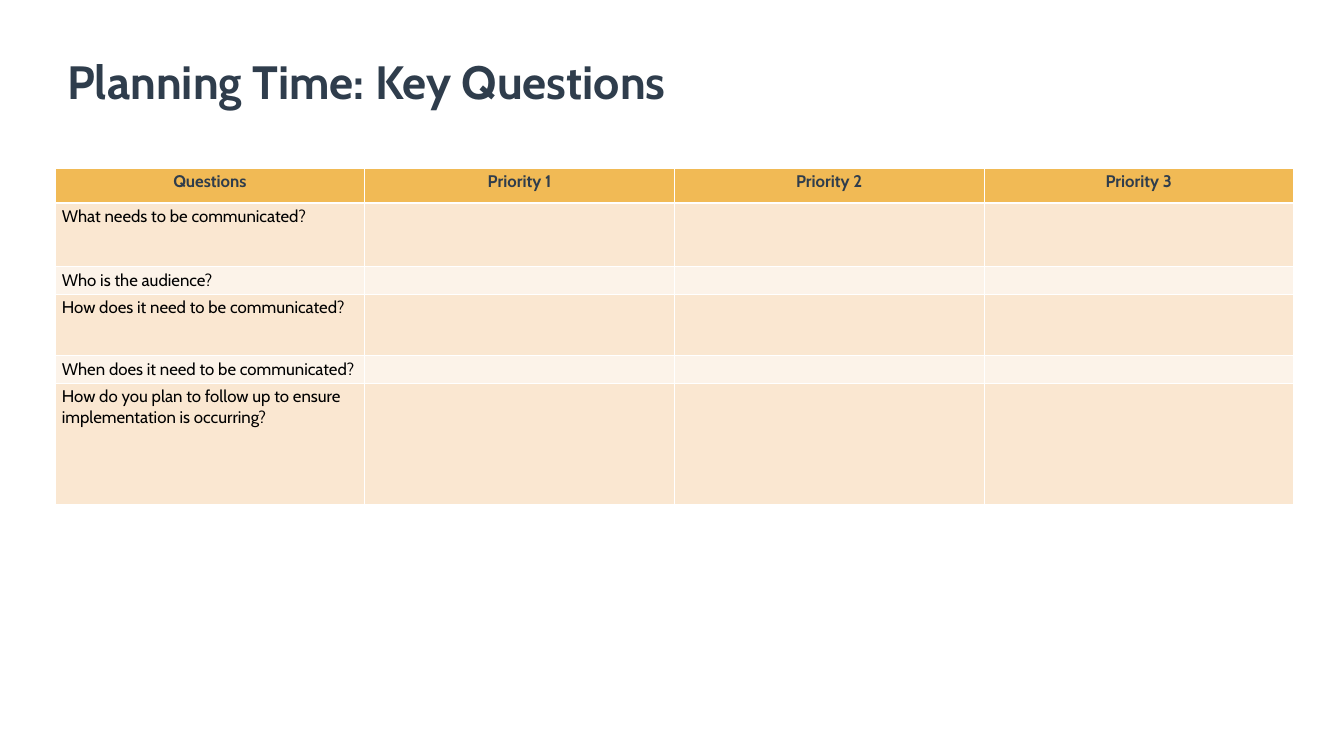
from lxml import etree
from pptx import Presentation
from pptx import util as u
from pptx.dml.color import RGBColor
from pptx.enum import text
from pptx.oxml.ns import qn

# Content
TITLE = "Planning Time: Key Questions"
HEADERS = ["Questions", "Priority 1", "Priority 2", "Priority 3"]
QUESTIONS = [  # question, row height in inches
    ("What needs to be communicated?", 0.95),
    ("Who is the audience?", 0.39),
    ("How does it need to be communicated?", 0.92),
    ("When does it need to be communicated?", 0.41),
    ("How do you plan to follow up to ensure implementation is occurring?", 1.8),
]
HEADER_HEIGHT = 0.52

# Look
COLORS = {"ink": "2F3D4C", "body": "000000", "header": "F1BA55",
          "odd": "FAE7D1", "even": "FCF3E9", "rule": "FFFFFF"}
TITLE_FONT = {"name": "Cabin", "size": u.Pt(50), "bold": True}
HEADER_FONT = {"name": "Cabin", "size": u.Pt(18), "bold": True}
BODY_FONT = {"name": "Cabin", "size": u.Pt(18), "bold": False}

# Geometry in inches
SLIDE_WIDTH, SLIDE_HEIGHT = 20, 11.25
TITLE_BOX = (1, 0.78, 18, 0.84)
TABLE_LEFT, TABLE_TOP, TABLE_WIDTH = 0.82, 2.5, 18.43


def write(para, words, font, color):
    span = para.add_run()
    span.text = words
    for name, value in font.items():
        setattr(span.font, name, value)
    span.font.color.rgb = RGBColor.from_string(COLORS[color])


def draw_borders(cell, widths):
    properties = cell._tc.get_or_add_tcPr()
    for side, points in zip("LRTB", widths):
        line = etree.SubElement(properties, qn(f"a:ln{side}"), w=str(u.Pt(points)))
        fill = etree.SubElement(line, qn("a:solidFill"))
        etree.SubElement(fill, qn("a:srgbClr"), val=COLORS["rule"])


def add_title(page):
    box = page.shapes.title
    box.left, box.top, box.width, box.height = map(u.Inches, TITLE_BOX)
    frame = box.text_frame
    for side in ("left", "top", "right", "bottom"):
        setattr(frame, f"margin_{side}", 0)
    frame.vertical_anchor = text.MSO_ANCHOR.MIDDLE
    frame.auto_size = text.MSO_AUTO_SIZE.NONE
    para = frame.paragraphs[0]
    para.alignment = text.PP_ALIGN.LEFT
    write(para, TITLE, TITLE_FONT, "ink")


def add_questions_table(page):
    heights = [HEADER_HEIGHT] + [height for _, height in QUESTIONS]
    blanks = [""] * (len(HEADERS) - 1)
    rows = [HEADERS] + [[question] + blanks for question, _ in QUESTIONS]
    table = page.shapes.add_table(
        len(rows), len(HEADERS), u.Inches(TABLE_LEFT), u.Inches(TABLE_TOP),
        u.Inches(TABLE_WIDTH), u.Inches(sum(heights))).table
    for column in table.columns:
        column.width = u.Inches(TABLE_WIDTH / len(HEADERS))

    for r, (words_in_row, height) in enumerate(zip(rows, heights)):
        table.rows[r].height = u.Inches(height)
        is_header = r == 0
        shade = "header" if is_header else "odd" if r % 2 else "even"
        for c, words in enumerate(words_in_row):
            cell = table.cell(r, c)
            draw_borders(cell, (1, 1, 3 if r == 1 else 1, 3 if is_header else 1))
            cell.fill.solid()
            cell.fill.fore_color.rgb = RGBColor.from_string(COLORS[shade])
            para = cell.text_frame.paragraphs[0]
            if is_header:
                para.alignment = text.PP_ALIGN.CENTER
                write(para, words, HEADER_FONT, "ink")
            elif words:
                write(para, words, BODY_FONT, "body")


def main():
    deck = Presentation()
    deck.slide_width, deck.slide_height = u.Inches(SLIDE_WIDTH), u.Inches(SLIDE_HEIGHT)
    page = deck.slides.add_slide(deck.slide_layouts[5])  # Title Only
    add_title(page)
    add_questions_table(page)
    deck.save("out.pptx")


if __name__ == "__main__":
    main()
